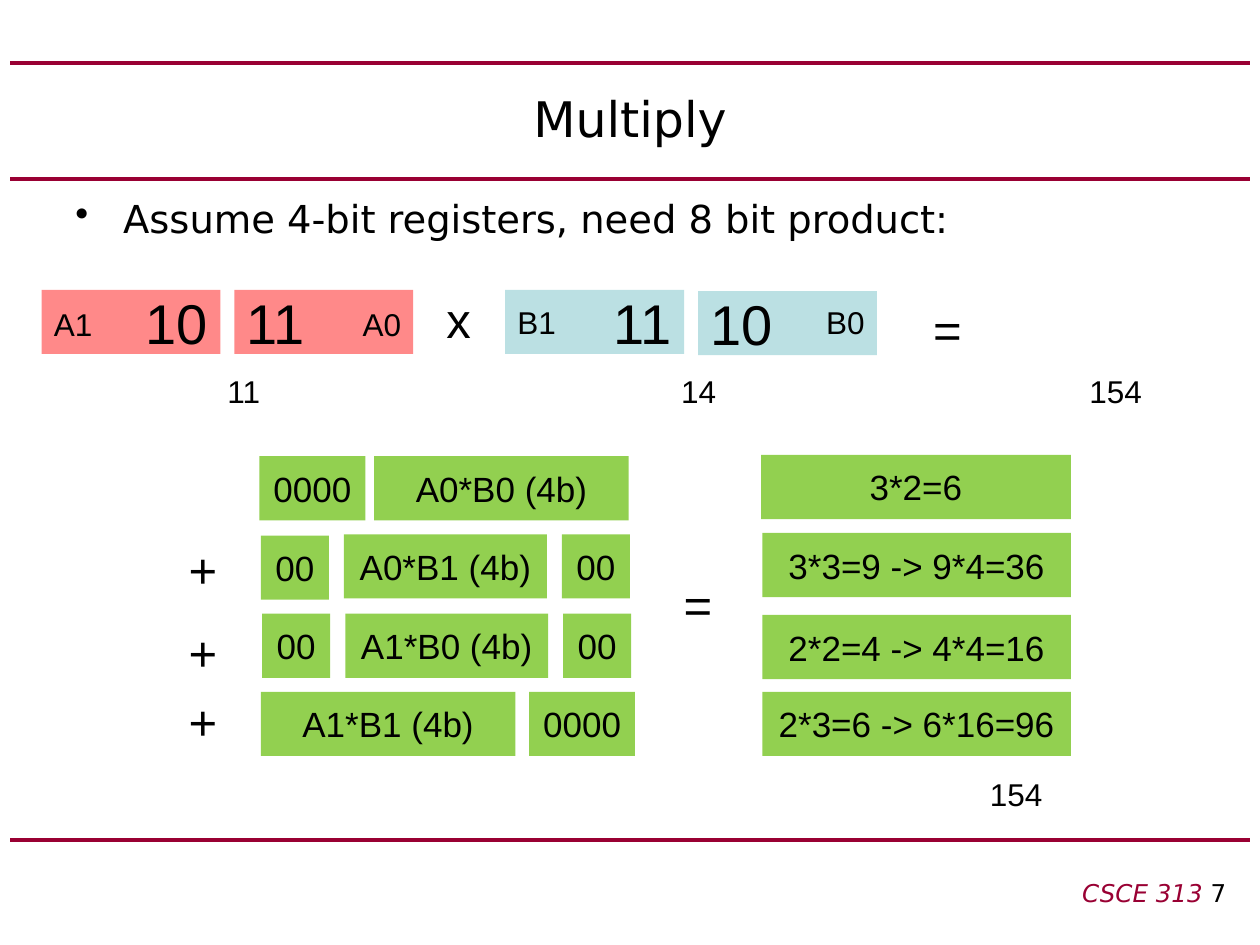
from dataclasses import dataclass

from lxml.etree import SubElement
from pptx import Presentation
from pptx.dml.color import RGBColor
from pptx.enum.shapes import MSO_CONNECTOR, MSO_SHAPE
from pptx.enum.text import MSO_ANCHOR, PP_ALIGN
from pptx.oxml.ns import qn
from pptx.util import Inches, Pt

MAROON, BLACK = "990033", "000000"
RED, BLUE, GREEN = "FF8989", "BBE0E3", "92D050"
BLOCK_HEIGHT = 0.51
OPERATOR_SIZE, LABEL_SIZE = 28, 18


@dataclass
class Block:
    text: str
    left: float
    top: float
    width: float
    fill: str = GREEN
    size: int = 20
    align: PP_ALIGN = PP_ALIGN.CENTER


@dataclass
class Label:
    text: str
    left: float
    top: float
    width: float
    height: float = 0.4
    size: int = LABEL_SIZE
    font: str = "Arial"
    align: PP_ALIGN = PP_ALIGN.CENTER
    anchor: MSO_ANCHOR = MSO_ANCHOR.TOP


def operand_half(text: str, left: float, top: float, fill: str, align: PP_ALIGN) -> Block:
    return Block(text, left, top, 1.42, fill, 32, align)


def operator(text: str, left: float, top: float) -> Label:
    return Label(text, left, top, 0.64, 0.57, OPERATOR_SIZE)


def color(hex_value: str) -> RGBColor:
    return RGBColor.from_string(hex_value)


def style_paragraph(paragraph, size: int, font: str, align: PP_ALIGN) -> None:
    paragraph.alignment = align
    paragraph.font.size = Pt(size)
    paragraph.font.name = font
    paragraph.font.color.rgb = color(BLACK)


def add_rule(slide, top: float) -> None:
    rule = slide.shapes.add_connector(
        MSO_CONNECTOR.STRAIGHT, Inches(0.08), Inches(top), Inches(9.92), Inches(top))
    rule.line.color.rgb = color(MAROON)
    rule.line.width = Pt(2.25)
    SubElement(rule._element.spPr, qn("a:effectLst"))


def add_block(slide, block: Block) -> None:
    shape = slide.shapes.add_shape(
        MSO_SHAPE.RECTANGLE, Inches(block.left), Inches(block.top),
        Inches(block.width), Inches(BLOCK_HEIGHT))
    shape.shadow.inherit = False
    shape.fill.solid()
    shape.fill.fore_color.rgb = color(block.fill)
    shape.line.fill.background()
    shape.text_frame.vertical_anchor = MSO_ANCHOR.MIDDLE
    paragraph = shape.text_frame.paragraphs[0]
    paragraph.text = block.text
    style_paragraph(paragraph, block.size, "Arial", block.align)


def add_label(slide, label: Label):
    """Add a text box and return its paragraph."""
    box = slide.shapes.add_textbox(
        Inches(label.left), Inches(label.top), Inches(label.width), Inches(label.height))
    box.text_frame.word_wrap = True
    box.text_frame.vertical_anchor = label.anchor
    paragraph = box.text_frame.paragraphs[0]
    paragraph.text = label.text
    style_paragraph(paragraph, label.size, label.font, label.align)
    return paragraph


def add_bullet(slide, label: Label) -> None:
    paragraph = add_label(slide, label)
    properties = paragraph._p.get_or_add_pPr()
    properties.set("marL", str(Inches(0.38)))
    properties.set("indent", str(-Inches(0.38)))
    bullet = properties.makeelement(qn("a:buChar"), {"char": "•"})
    properties.insert(0, bullet)


def add_footer(slide, course: str, number: str) -> None:
    paragraph = add_label(slide, Label("", 3.75, 6.92, 6.08, 0.33, 14, "DejaVu Sans",
                                       PP_ALIGN.RIGHT))
    course_run = paragraph.add_run()
    course_run.text = course
    course_run.font.italic = True
    course_run.font.color.rgb = color(MAROON)
    paragraph.add_run().text = number


OPERAND_HALVES = [
    operand_half("10", 0.33, 2.3, RED, PP_ALIGN.RIGHT),
    operand_half("11", 1.86, 2.3, RED, PP_ALIGN.LEFT),
    operand_half("11", 4.01, 2.3, BLUE, PP_ALIGN.RIGHT),
    operand_half("10", 5.54, 2.31, BLUE, PP_ALIGN.LEFT),
]

PARTIAL_PRODUCTS = [
    Block("0000", 2.06, 3.62, 0.84),
    Block("A0*B0 (4b)", 2.97, 3.62, 2.02),
    Block("00", 2.07, 4.25, 0.54),
    Block("A0*B1 (4b)", 2.73, 4.24, 1.61),
    Block("00", 4.46, 4.24, 0.54),
    Block("00", 2.08, 4.87, 0.54),
    Block("A1*B0 (4b)", 2.74, 4.87, 1.61),
    Block("00", 4.47, 4.87, 0.54),
    Block("A1*B1 (4b)", 2.07, 5.49, 2.02),
    Block("0000", 4.2, 5.49, 0.84),
]

RESULTS = [
    Block("3*2=6", 6.04, 3.61, 2.46),
    Block("3*3=9 -> 9*4=36", 6.05, 4.23, 2.45),
    Block("2*2=4 -> 4*4=16", 6.05, 4.88, 2.45),
    Block("2*3=6 -> 6*16=96", 6.05, 5.49, 2.45),
]

REGISTER_NAMES = [
    Label("A1", 0.12, 2.37, 0.92),
    Label("A0", 2.57, 2.37, 0.92),
    Label("B1", 3.8, 2.36, 0.92),
    Label("B0", 6.25, 2.36, 0.92),
]

DECIMAL_VALUES = [
    Label("11", 1.5, 2.9, 0.87),
    Label("14", 5.11, 2.9, 0.87),
    Label("154", 8.42, 2.9, 0.87),
    Label("154", 7.63, 6.1, 0.87),
]

OPERATORS = [
    operator("x", 3.32, 2.25),
    operator("=", 7.2, 2.33),
    *(operator("+", 1.29, top) for top in (4.23, 4.89, 5.44)),
    operator("=", 5.22, 4.51),
]


def main() -> None:
    presentation = Presentation()
    presentation.slide_width = Inches(10)
    presentation.slide_height = Inches(7.5)
    slide = presentation.slides.add_slide(presentation.slide_layouts[6])

    for top in (0.5, 1.42, 6.67):
        add_rule(slide, top)
    add_label(slide, Label("Multiply", 0.5, 0.5, 9, 0.87, 28, "DejaVu Sans",
                           anchor=MSO_ANCHOR.MIDDLE))
    add_bullet(slide, Label("Assume 4-bit registers, need 8 bit product:", 0.5, 1.5, 9, 0.5,
                            22, "DejaVu Sans", PP_ALIGN.LEFT))
    for block in OPERAND_HALVES + PARTIAL_PRODUCTS + RESULTS:
        add_block(slide, block)
    for label in REGISTER_NAMES + DECIMAL_VALUES + OPERATORS:
        add_label(slide, label)
    add_footer(slide, "CSCE 313 ", "7")

    presentation.save("out.pptx")


if __name__ == "__main__":
    main()
